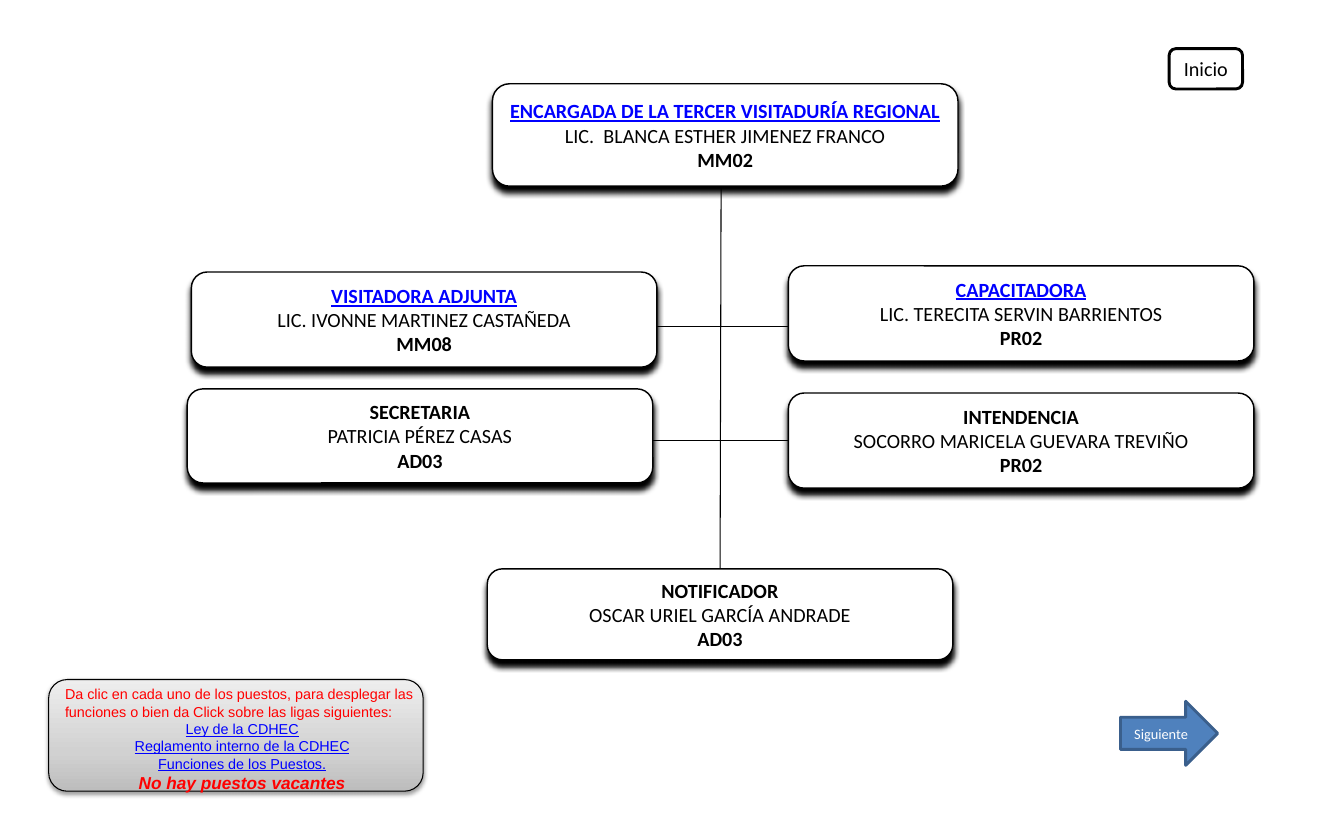
from dataclasses import dataclass

from lxml.etree import SubElement
from pptx import Presentation
from pptx.dml.color import RGBColor
from pptx.enum.shapes import MSO_CONNECTOR, MSO_SHAPE as SHAPE
from pptx.enum.text import MSO_ANCHOR, MSO_AUTO_SIZE, PP_ALIGN
from pptx.oxml.ns import qn
from pptx.util import Inches, Pt


@dataclass(frozen=True)
class Theme:
    black: str = "000000"
    white: str = "FFFFFF"
    link: str = "0000FF"
    alert: str = "FF0000"
    arrow: str = "4F81BD"
    arrow_line: str = "3A5F8C"
    panel: tuple = ((0, "BDBDBD"), (35, "D1D1D1"), (100, "EEEEEE"))
    font: str = "Calibri"
    note_font: str = "Arial"
    size: int = 14
    note_size: int = 10
    alert_size: int = 12


T = Theme()
BOX_W = 4.5

# left, top, height, job title, person, pay grade, title is a link
POSTS = [
    (4.76, 0.81, 0.99, "ENCARGADA DE LA TERCER VISITADURÍA REGIONAL",
     "LIC.  BLANCA ESTHER JIMENEZ FRANCO", "MM02", True),
    (1.85, 2.63, 0.92, "VISITADORA ADJUNTA",
     "LIC. IVONNE MARTINEZ CASTAÑEDA", "MM08", True),
    (1.81, 3.76, 0.91, "SECRETARIA", "PATRICIA PÉREZ CASAS", "AD03", False),
    (7.62, 3.8, 0.92, "INTENDENCIA",
     "SOCORRO MARICELA GUEVARA TREVIÑO", "PR02", False),
    (7.62, 2.57, 0.92, "CAPACITADORA",
     "LIC. TERECITA SERVIN BARRIENTOS", "PR02", True),
    (4.71, 5.5, 0.88, "NOTIFICADOR", "OSCAR URIEL GARCÍA ANDRADE", "AD03", False),
]

# Horizontal branches: from x, to x, y
BRANCHES = [(5.87, 6.97, 3.16), (6.97, 8.07, 3.16),
            (6.31, 6.97, 4.26), (6.72, 7.82, 4.26)]

NOTE = "Da clic en cada uno de los puestos, para desplegar las funciones o bien da Click sobre las ligas siguientes:"
LINKS = ["Ley de la CDHEC", "Reglamento interno de la CDHEC", "Funciones de los Puestos."]
VACANCIES = "No hay puestos vacantes"


def rgb(color):
    return RGBColor.from_string(color)


def add_line(s, x1, y1, x2, y2):
    line = s.shapes.add_connector(MSO_CONNECTOR.STRAIGHT, Inches(x1), Inches(y1),
                                  Inches(x2), Inches(y2))
    line.line.color.rgb = rgb(T.black)
    line.line.width = Pt(0.75)
    SubElement(line._element.spPr, qn("a:effectLst"))
    return line


def add_box(s, kind, x, y, w, h, fill=T.white, line=T.black, width=1.0):
    sp = s.shapes.add_shape(kind, Inches(x), Inches(y), Inches(w), Inches(h))
    sp.fill.solid()
    sp.fill.fore_color.rgb = rgb(fill)
    sp.line.color.rgb = rgb(line)
    sp.line.width = Pt(width)
    sp.shadow.inherit = False
    sp.text_frame.vertical_anchor = MSO_ANCHOR.MIDDLE
    return sp


def add_shadow(sp, alpha, blur, dist):
    effects = sp._element.spPr.find(qn("a:effectLst"))
    shadow = SubElement(effects, qn("a:outerShdw"), blurRad=str(Pt(blur)),
                        dist=str(Pt(dist)), dir="5400000", algn="ctr", rotWithShape="0")
    color = SubElement(shadow, qn("a:srgbClr"), val=T.black)
    SubElement(color, qn("a:alpha"), val=str(alpha * 1000))


def set_gradient(sp, stops, angle):
    sp.fill.gradient()
    sp.fill.gradient_angle = angle
    gs_list = sp._element.spPr.find(qn("a:gradFill")).find(qn("a:gsLst"))
    gs_list.clear()
    for pos, color in stops:
        gs = SubElement(gs_list, qn("a:gs"), pos=str(pos * 1000))
        SubElement(gs, qn("a:srgbClr"), val=color)


def write(p, text, size=T.size, color=T.black, font=T.font, align=PP_ALIGN.CENTER,
          bold=False, italic=False, underline=False):
    p.text = text
    p.alignment = align
    f = p.runs[0].font
    f.name, f.size, f.color.rgb = font, Pt(size), rgb(color)
    f.bold, f.italic, f.underline = bold, italic, underline


def add_post(s, x, y, h, title, person, grade, linked):
    sp = add_box(s, SHAPE.ROUNDED_RECTANGLE, x, y, BOX_W, h)
    add_shadow(sp, 100, 4, 4)
    tf = sp.text_frame
    tf.word_wrap = False
    tf.margin_left = tf.margin_right = Inches(0.17)
    tf.margin_top = tf.margin_bottom = Inches(0.09)
    write(tf.paragraphs[0], title, color=T.link if linked else T.black,
          bold=True, underline=linked)
    write(tf.add_paragraph(), person)
    write(tf.add_paragraph(), grade, bold=True)
    return sp


def add_note(s):
    panel = add_box(s, SHAPE.ROUNDED_RECTANGLE, 0.47, 6.57, 3.62, 1.08, width=0.75)
    set_gradient(panel, T.panel, 90)
    add_shadow(panel, 38, 3.1, 1.6)

    tf = s.shapes.add_textbox(Inches(0.53), Inches(6.58), Inches(3.62), Inches(1.14)).text_frame
    tf.word_wrap = True
    tf.auto_size = MSO_AUTO_SIZE.SHAPE_TO_FIT_TEXT
    write(tf.paragraphs[0], NOTE, T.note_size, T.alert, T.note_font, PP_ALIGN.LEFT)
    for link in LINKS:
        write(tf.add_paragraph(), link, T.note_size, T.link, T.note_font, underline=True)
    write(tf.add_paragraph(), VACANCIES, T.alert_size, T.alert, T.note_font,
          bold=True, italic=True)


def main():
    prs = Presentation()
    prs.slide_width, prs.slide_height = Inches(12.99), Inches(7.88)
    s = prs.slides.add_slide(prs.slide_layouts[6])

    # Lines, behind the boxes
    trunk = add_line(s, 6.97, 1.75, 6.97, 5.5)
    for x1, x2, y in BRANCHES:
        add_line(s, x1, y, x2, y)

    # Posts; the trunk ends at the last one
    boxes = [add_post(s, *post) for post in POSTS]
    trunk.end_connect(boxes[-1], 0)

    # Note with links
    add_note(s)

    # Navigation buttons
    home = add_box(s, SHAPE.ROUNDED_RECTANGLE, 11.3, 0.47, 0.71, 0.39, width=2)
    write(home.text_frame.paragraphs[0], "Inicio")
    following = add_box(s, SHAPE.RIGHT_ARROW, 10.83, 6.78, 0.94, 0.62,
                        T.arrow, T.arrow_line, 2)
    write(following.text_frame.paragraphs[0], "Siguiente", T.note_size, T.white)

    prs.save("out.pptx")


if __name__ == "__main__":
    main()
